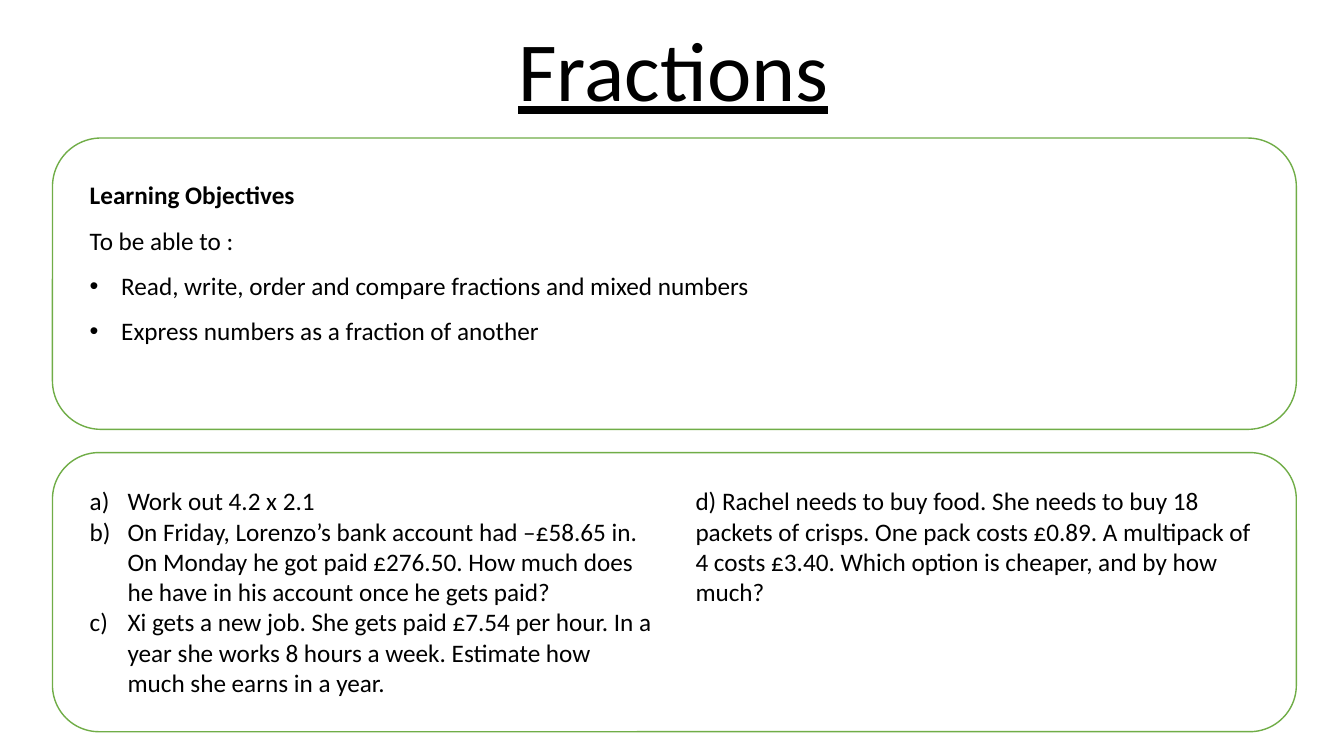
"""Build the Fractions lesson slide with its objectives and starter questions."""
from dataclasses import dataclass

from lxml import etree
from pptx import Presentation
from pptx import util as u
from pptx.dml.color import RGBColor
from pptx.enum import shapes, text
from pptx.oxml import ns

BLACK = RGBColor(0x00, 0x00, 0x00)
GREEN = RGBColor(0x70, 0xAD, 0x47)
FONT = "Calibri"


@dataclass(frozen=True)
class Area:
    left: float
    top: float
    width: float
    height: float

    def lengths(self) -> list[u.Length]:
        return [u.Pt(value) for value in (self.left, self.top, self.width, self.height)]


@dataclass(frozen=True)
class Line:
    wording: str
    marker: str = "buNone"
    value: str = ""
    indent: float = 0
    spacing: float = 1
    bold: bool = False


@dataclass(frozen=True)
class Block:
    placeholder: int
    area: Area
    lines: list[Line]


def bullet(wording: str) -> Line:
    return Line(wording, "buChar", "•", 22.5, 1.5)


def question(wording: str) -> Line:
    return Line(wording, "buAutoNum", "alphaLcParenR", 27)


PANELS = [Area(37.5, 98.6, 888.5, 208.1), Area(37.5, 323.3, 888.5, 199.4)]
TITLE = Block(0, Area(121, 10.8, 720, 78.5), [Line("Fractions", spacing=0.9)])
BLOCKS = [
    Block(1, Area(56.9, 124.6, 849.6, 123.8), [
        Line("Learning Objectives", bold=True),
        Line("To be able to :", spacing=1.5),
        bullet("Read, write, order and compare fractions and mixed numbers"),
        bullet("Express numbers as a fraction of another"),
    ]),
    Block(2, Area(56.9, 343.4, 416.9, 159.8), [
        question("Work out 4.2 x 2.1"),
        question("On Friday, Lorenzo’s bank account had –£58.65 in. On Monday he got paid "
                 "£276.50. How much does he have in his account once he gets paid?"),
        question("Xi gets a new job. She gets paid £7.54 per hour. In a year she works "
                 "8 hours a week. Estimate how much she earns in a year."),
    ]),
    Block(4, Area(489.6, 343.4, 416.9, 94.3), [
        Line("d) Rachel needs to buy food. She needs to buy 18 packets of crisps. One pack "
             "costs £0.89. A multipack of 4 costs £3.40. Which option is cheaper, "
             "and by how much?"),
    ]),
]


def set_marker(para, line: Line) -> None:
    properties = para._p.get_or_add_pPr()
    properties.set("marL", str(u.Pt(line.indent)))
    properties.set("indent", str(-u.Pt(line.indent)))
    marker = etree.SubElement(properties, ns.qn(f"a:{line.marker}"))
    if line.value:
        marker.set("char" if line.marker == "buChar" else "type", line.value)


def fill_block(page, block: Block, size: float, anchor, align, underline: bool = False) -> None:
    box = next(item for item in page.placeholders
               if item.placeholder_format.idx == block.placeholder)
    box.left, box.top, box.width, box.height = block.area.lengths()
    frame = box.text_frame
    frame.auto_size = text.MSO_AUTO_SIZE.NONE
    frame.vertical_anchor = anchor
    frame.word_wrap = True
    for number, line in enumerate(block.lines):
        para = frame.add_paragraph() if number else frame.paragraphs[0]
        set_marker(para, line)
        para.text = line.wording
        para.alignment = align
        para.line_spacing = line.spacing
        para.space_before = u.Pt(0)
        font = para.font
        font.name, font.size, font.bold = FONT, u.Pt(size), line.bold
        font.underline = underline
        font.color.rgb = BLACK


def draw_panel(page, area: Area) -> None:
    panel = page.shapes.add_shape(shapes.MSO_SHAPE.ROUNDED_RECTANGLE, *area.lengths())
    panel.shadow.inherit = False
    panel.fill.background()
    panel.line.color.rgb = GREEN
    panel.line.width = u.Pt(1)


def main() -> None:
    deck = Presentation()
    deck.slide_width, deck.slide_height = u.Pt(960), u.Pt(540)
    page = deck.slides.add_slide(deck.slide_layouts.get_by_name("Comparison"))
    fill_block(page, TITLE, 60, text.MSO_ANCHOR.BOTTOM, text.PP_ALIGN.CENTER, True)
    for block in BLOCKS:
        fill_block(page, block, 18, text.MSO_ANCHOR.TOP, text.PP_ALIGN.LEFT)
    for box in list(page.placeholders):
        if not box.text_frame.text:
            box.element.getparent().remove(box.element)
    for area in PANELS:
        draw_panel(page, area)
    deck.save("out.pptx")


if __name__ == "__main__":
    main()
